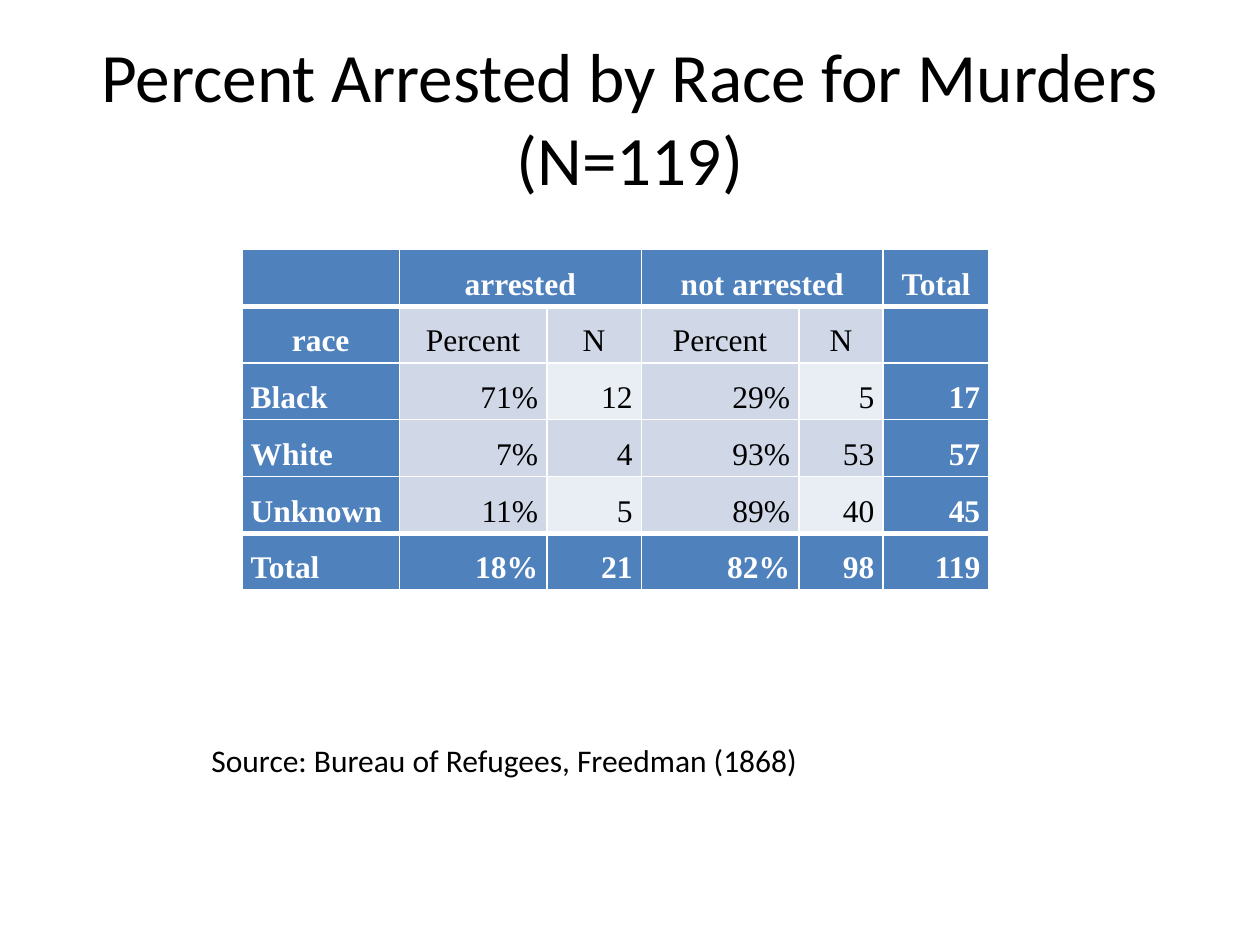
"""Build a slide with a table of murder arrests by race."""
from lxml import etree
from pptx import Presentation
from pptx.dml.color import RGBColor
from pptx.enum.text import MSO_ANCHOR, PP_ALIGN
from pptx.oxml.ns import qn
from pptx.util import Inches, Pt

LEFT, CENTER, RIGHT = PP_ALIGN.LEFT, PP_ALIGN.CENTER, PP_ALIGN.RIGHT
MIDDLE = MSO_ANCHOR.MIDDLE
BLUE, PALE, PALER = "4F81BD", "D0D8E8", "E9EDF4"
WHITE, BLACK = "FFFFFF", "000000"


def write(frame, text, size, font, color, align=LEFT, bold=False):
    frame.text = text
    paragraph = frame.paragraphs[0]
    paragraph.alignment = align
    for run in paragraph.runs:
        run.font.size = Pt(size)
        run.font.name = font
        run.font.bold = bold
        run.font.color.rgb = RGBColor.from_string(color)
    return paragraph


def draw_borders(cell, top, bottom):
    properties = cell._tc.get_or_add_tcPr()
    sides = [("a:lnL", 1), ("a:lnR", 1), ("a:lnT", top), ("a:lnB", bottom)]
    for position, (side, width) in enumerate(sides):
        line = etree.Element(qn(side), w=str(Pt(width)))
        fill = etree.SubElement(line, qn("a:solidFill"))
        etree.SubElement(fill, qn("a:srgbClr"), val=WHITE)
        properties.insert(position, line)


presentation = Presentation()
presentation.slide_width, presentation.slide_height = Inches(10), Inches(7.5)
slide = presentation.slides.add_slide(presentation.slide_layouts[6])

title = slide.shapes.add_textbox(Inches(0.5), Inches(0.3), Inches(9), Inches(1.25)).text_frame
title.word_wrap = True
title.vertical_anchor = MIDDLE
write(title, "Percent Arrested by Race for Murders (N=119)", 39.6, "Calibri", BLACK, CENTER)

arrests = [
    ["", "arrested", "", "not arrested", "", "Total"],
    ["race", "Percent", "N", "Percent", "N", ""],
    ["Black", "71%", "12", "29%", "5", "17"],
    ["White", "7%", "4", "93%", "53", "57"],
    ["Unknown", "11%", "5", "89%", "40", "45"],
    ["Total", "18%", "21", "82%", "98", "119"],
]
column_widths = [1.25, 1.17, 0.75, 1.25, 0.67, 0.84]
last_row, last_column = len(arrests) - 1, len(column_widths) - 1
heavy_rules = (1, last_row)

table = slide.shapes.add_table(
    len(arrests), len(column_widths), Inches(1.92), Inches(1.98),
    Inches(sum(column_widths)), Inches(2.49)).table
for column, width in zip(table.columns, column_widths):
    column.width = Inches(width)
for first in (1, 3):
    table.cell(0, first).merge(table.cell(0, first + 1))

for r, values in enumerate(arrests):
    for c, value in enumerate(values):
        cell = table.cell(r, c)
        on_edge = r in (0, last_row) or c in (0, last_column)
        striped = c in (2, 4) and r in (2, 4)
        draw_borders(cell, 3 if r in heavy_rules else 1, 3 if r + 1 in heavy_rules else 1)
        cell.fill.solid()
        cell.fill.fore_color.rgb = RGBColor.from_string(
            BLUE if on_edge else PALER if striped else PALE)
        if value:
            cell.margin_left = cell.margin_right = Inches(0.07)
            cell.margin_top = cell.margin_bottom = 0
            align = CENTER if r < 2 else LEFT if c == 0 else RIGHT
            paragraph = write(cell.text_frame, value, 18, "Times New Roman",
                              WHITE if on_edge else BLACK, align, on_edge)
            paragraph.line_spacing = 1.5

source = slide.shapes.add_textbox(Inches(1.58), Inches(5.83), Inches(4.97), Inches(0.4)).text_frame
source.word_wrap = False
write(source, "Source: Bureau of Refugees, Freedman (1868)", 18, "Calibri", BLACK)

presentation.save("out.pptx")
